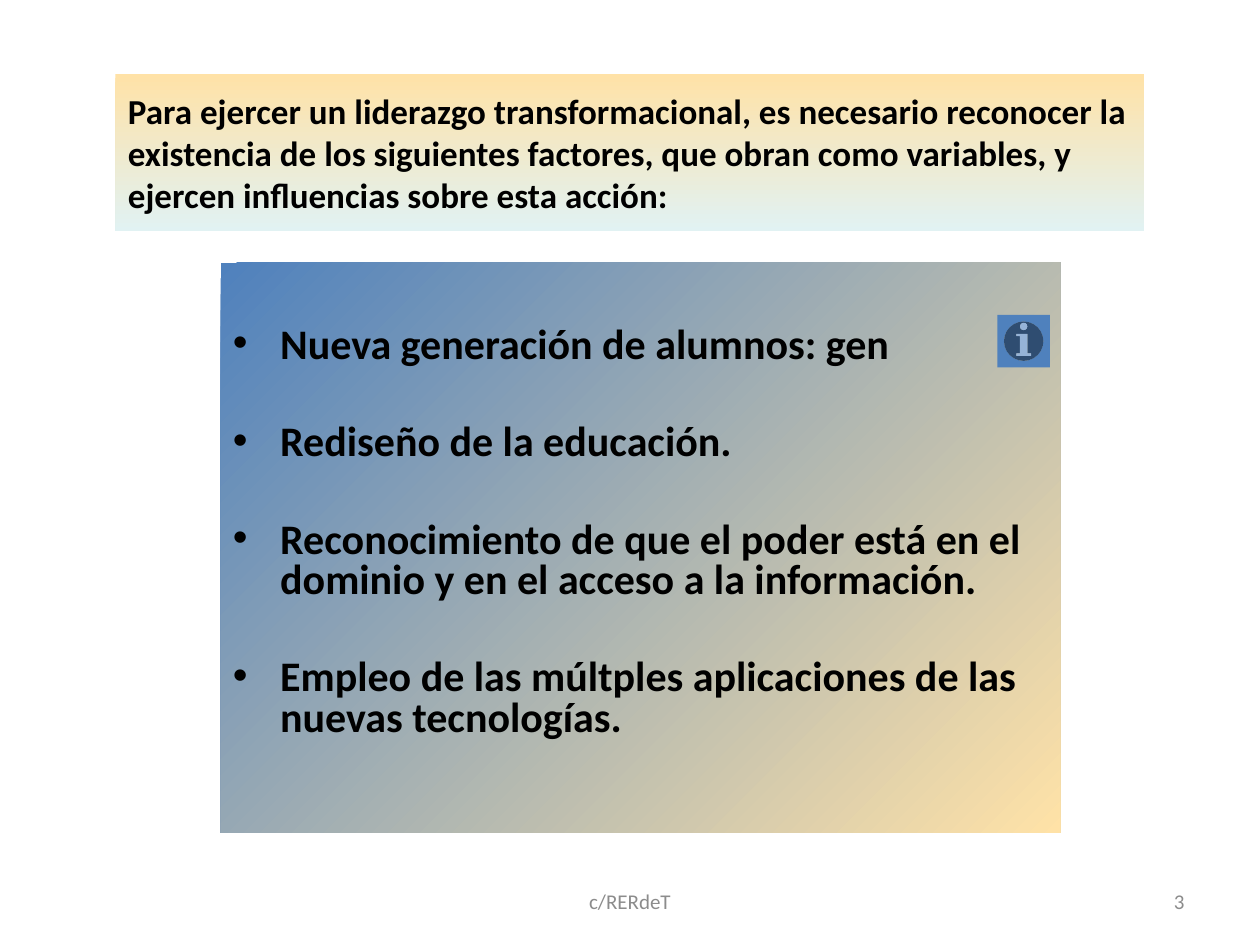
from dataclasses import dataclass

from lxml.etree import SubElement
from pptx import Presentation
from pptx.dml.color import RGBColor
from pptx.enum.shapes import MSO_SHAPE
from pptx.enum.text import MSO_ANCHOR, PP_ALIGN
from pptx.oxml.ns import qn
from pptx.util import Pt


@dataclass(frozen=True)
class Theme:
    font: str = "Calibri"
    ink: str = "000000"
    muted: str = "8C8C8C"
    blue: str = "4F81BD"
    sand: str = "FFE2A7"
    mist: str = "E1F2F3"
    title: int = 20
    body: int = 24
    footer: int = 12


THEME = Theme()

TITLE = ("Para ejercer un liderazgo transformacional, es necesario reconocer la "
         "existencia de los siguientes factores, que obran como variables, y "
         "ejercen influencias sobre esta acción:")
FACTORS = [
    "Nueva generación de alumnos: gen",
    "Rediseño de la educación.",
    "Reconocimiento de que el poder está en el dominio y en el acceso a la información.",
    "Empleo de las múltples aplicaciones de las nuevas tecnologías.",
]


def set_all(obj, **values):
    for name, value in values.items():
        setattr(obj, name, value)


def add_box(s, box, kind=MSO_SHAPE.RECTANGLE):
    sp = s.shapes.add_shape(kind, *map(Pt, box))
    sp.shadow.inherit = False
    sp.line.fill.background()
    return sp


def fill_gradient(sp, colors, angle):
    sp.fill.gradient()
    sp.fill.gradient_angle = angle
    for i, (stop, color) in enumerate(zip(sp.fill.gradient_stops, colors)):
        stop.position = i
        stop.color.rgb = RGBColor.from_string(color)


def write(p, text, size, color, bold=False, align=PP_ALIGN.LEFT):
    p.alignment = align
    r = p.add_run()
    r.text = text
    set_all(r.font, name=THEME.font, size=Pt(size), bold=bold)
    r.font.color.rgb = RGBColor.from_string(color)


def add_bullet(p, indent):
    pPr = p._p.get_or_add_pPr()
    pPr.set("marL", str(Pt(indent)))
    pPr.set("indent", str(-Pt(indent)))
    SubElement(pPr, qn("a:buFont"), typeface="Arial")
    SubElement(pPr, qn("a:buChar"), char="•")


def title_banner(s, box):
    sp = add_box(s, box)
    fill_gradient(sp, (THEME.sand, THEME.mist), 270)
    tf = sp.text_frame
    set_all(tf, word_wrap=True, vertical_anchor=MSO_ANCHOR.MIDDLE)
    write(tf.paragraphs[0], TITLE, THEME.title, THEME.ink, bold=True)


def factors_panel(s, box):
    sp = add_box(s, box)
    fill_gradient(sp, (THEME.blue, THEME.sand), 315)
    tf = sp.text_frame
    set_all(tf, word_wrap=True, vertical_anchor=MSO_ANCHOR.TOP, margin_top=Pt(37))
    for i, factor in enumerate(FACTORS):
        p = tf.paragraphs[0] if i == 0 else tf.add_paragraph()
        set_all(p, line_spacing=0.8, space_before=Pt(0), space_after=Pt(32.6))
        add_bullet(p, 27)
        write(p, factor, THEME.body, THEME.ink, bold=True)

    # Information button in the upper right corner
    left, top, width, _ = box
    size = 30
    button = add_box(s, (left + width - size - 6, top + 30, size, size),
                     MSO_SHAPE.ACTION_BUTTON_INFORMATION)
    button.fill.solid()
    button.fill.fore_color.rgb = RGBColor.from_string(THEME.blue)


def footer_text(s, box, text, align):
    tf = s.shapes.add_textbox(*map(Pt, box)).text_frame
    set_all(tf, word_wrap=True, vertical_anchor=MSO_ANCHOR.MIDDLE)
    write(tf.paragraphs[0], text, THEME.footer, THEME.muted, align=align)


def main():
    prs = Presentation()
    set_all(prs, slide_width=Pt(720), slide_height=Pt(540))
    s = prs.slides.add_slide(prs.slide_layouts[6])

    # Footer and page number
    footer_text(s, (246, 500.5, 228, 28.75), "c/RERdeT", PP_ALIGN.CENTER)
    footer_text(s, (516, 500.5, 168, 28.75), "3", PP_ALIGN.RIGHT)

    # Heading and list of factors
    title_banner(s, (66, 42, 588, 90))
    factors_panel(s, (126, 150, 480, 326))

    prs.save("out.pptx")


if __name__ == "__main__":
    main()
